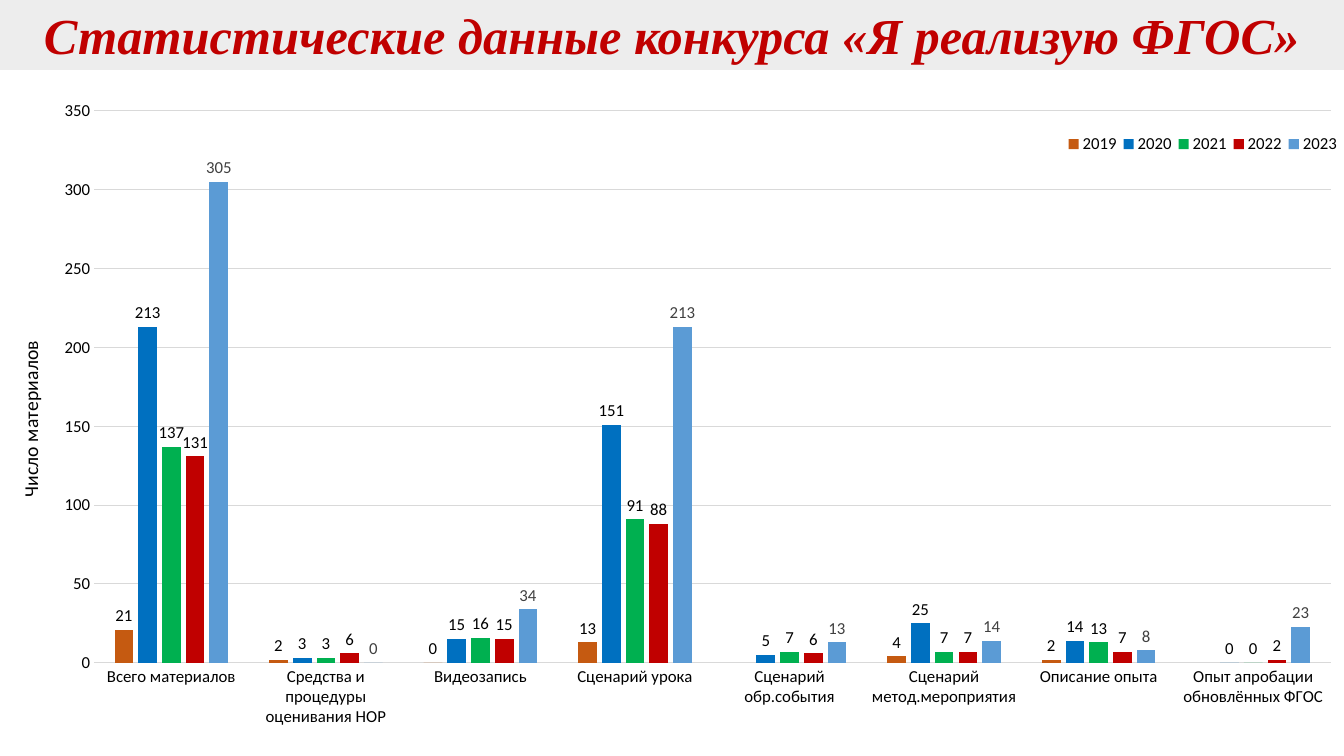
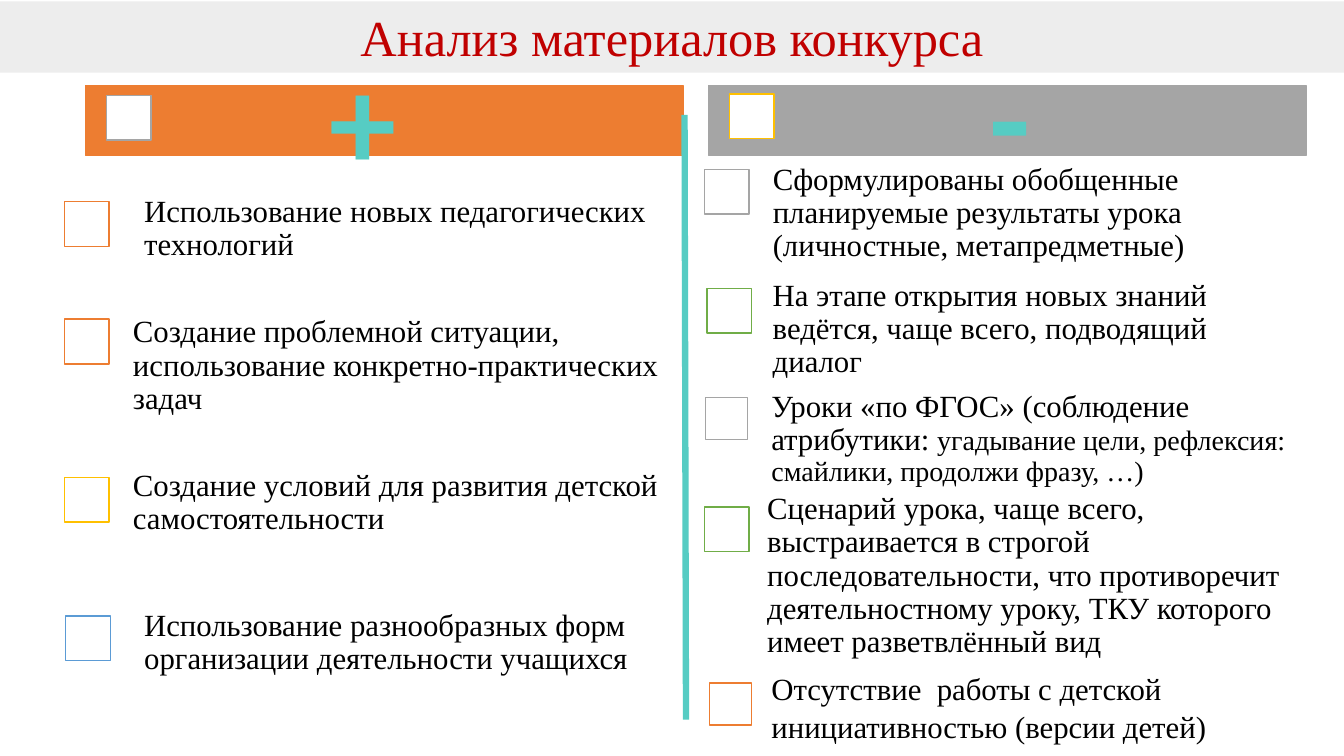
from dataclasses import dataclass

from pptx import Presentation
from pptx.chart.data import CategoryChartData
from pptx.dml.color import RGBColor
from pptx.enum.chart import XL_CHART_TYPE, XL_LABEL_POSITION, XL_LEGEND_POSITION, XL_TICK_MARK
from pptx.enum.shapes import MSO_CONNECTOR, MSO_SHAPE
from pptx.enum.text import MSO_ANCHOR as ANCHOR, PP_ALIGN as ALIGN
from pptx.oxml.ns import qn
from pptx.util import Pt


@dataclass(frozen=True)
class Theme:
    serif: str = "Times New Roman"
    sans: str = "Calibri"
    black: str = "000000"
    white: str = "FFFFFF"
    band: str = "EDEDED"
    red: str = "C00000"
    orange: str = "ED7D31"
    gray: str = "A5A5A5"
    yellow: str = "FFC000"
    green: str = "70AD47"
    blue: str = "5B9BD5"
    teal: str = "56CCC3"
    grid: str = "D9D9D9"
    dark_gray: str = "404040"
    title_size: int = 36
    sign_size: int = 96
    body_size: int = 22
    detail_size: int = 20
    chart_size: int = 12
    axis_title_size: int = 14


THEME = Theme()
SLIDE_WIDTH, SLIDE_HEIGHT = 960, 540
CHECKBOX_SIZE = 32
COLUMN_TOP, COLUMN_WIDTH, COLUMN_HEIGHT = 61, 427, 50

CATEGORIES = [
    "Всего материалов",
    "Средства и процедуры оценивания НОР",
    "Видеозапись",
    "Сценарий урока",
    "Сценарий обр.события",
    "Сценарий метод.мероприятия",
    "Описание опыта",
    "Опыт апробации обновлённых ФГОС",
]
YEARS = [
    ("2019", [21, 2, 0, 13, None, 4, 2, None], "C55A11", THEME.black),
    ("2020", [213, 3, 15, 151, 5, 25, 14, 0], "0070C0", THEME.black),
    ("2021", [137, 3, 16, 91, 7, 7, 13, 0], "00B050", THEME.black),
    ("2022", [131, 6, 15, 88, 6, 7, 7, 2], THEME.red, THEME.black),
    ("2023", [305, 0, 34, 213, 13, 14, 8, 23], THEME.blue, THEME.dark_gray),
]


@dataclass(frozen=True)
class Point:
    text: str
    text_box: tuple
    checkbox: tuple
    color: str
    detail: str = ""
    spacing: float = 0.9
    checkbox_size: int = CHECKBOX_SIZE


STRENGTHS = [
    Point("Использование новых педагогических технологий",
          (91, 127, 422, 73), (46, 144), THEME.orange),
    Point("Создание проблемной ситуации, использование конкретно-практических задач",
          (83, 225, 422, 73), (46, 228), THEME.orange),
    Point("Создание условий для развития детской самостоятельности",
          (83, 323, 422, 73), (46, 341), THEME.yellow),
    Point("Использование разнообразных форм организации деятельности учащихся",
          (91, 423, 422, 73), (47, 440), THEME.blue),
]
WEAKNESSES = [
    Point("Сформулированы обобщенные планируемые результаты урока "
          "(личностные, метапредметные)",
          (540, 116, 397, 73), (503, 121), THEME.gray),
    Point("На этапе открытия новых знаний ведётся, чаще всего, подводящий диалог",
          (540, 199, 380, 73), (505, 206), THEME.green),
    Point("Уроки «по ФГОС» (соблюдение атрибутики: ",
          (539, 277, 397, 73), (504, 284), THEME.gray,
          detail="угадывание цели, рефлексия: смайлики, продолжи фразу, …)",
          checkbox_size=30),
    Point("Сценарий урока, чаще всего, выстраивается в строгой последовательности, "
          "что противоречит деятельностному уроку, ТКУ которого имеет разветвлённый вид",
          (536, 341, 400, 141), (503, 362), THEME.green),
    Point("Отсутствие  работы с детской инициативностью (версии детей)",
          (539, 474, 397, 61), (507, 488), THEME.orange,
          spacing=1.05, checkbox_size=30),
]


def rgb(color):
    return RGBColor.from_string(color)


def style_font(font, size, color=THEME.black, family=THEME.sans, bold=False, italic=False):
    font.size, font.name = Pt(size), family
    font.color.rgb = rgb(color)
    font.bold, font.italic = bold, italic


def add_rectangle(slide, left, top, width, height, fill, outline=None):
    rectangle = slide.shapes.add_shape(
        MSO_SHAPE.RECTANGLE, Pt(left), Pt(top), Pt(width), Pt(height))
    rectangle.shadow.inherit = False
    rectangle.fill.solid()
    rectangle.fill.fore_color.rgb = rgb(fill)
    if outline:
        rectangle.line.color.rgb = rgb(outline)
        rectangle.line.width = Pt(1)
    else:
        rectangle.line.fill.background()
    return rectangle


def add_title(slide, text, top=0, height=50, anchor=ANCHOR.TOP, spacing=1.0, emphasis=False):
    band = add_rectangle(slide, 0, top, SLIDE_WIDTH, height, THEME.band)
    band.text_frame.word_wrap = True
    band.text_frame.vertical_anchor = anchor
    title = band.text_frame.paragraphs[0]
    title.text = text
    title.alignment = ALIGN.CENTER
    title.line_spacing = spacing
    style_font(title.font, THEME.title_size, THEME.red, THEME.serif, emphasis, emphasis)


def add_paragraph_box(slide, bounds, inset, alignment, spacing):
    box = slide.shapes.add_textbox(*map(Pt, bounds))
    frame = box.text_frame
    frame.word_wrap = True
    frame.vertical_anchor = ANCHOR.MIDDLE
    frame.margin_left = frame.margin_right = Pt(inset)
    frame.margin_top = frame.margin_bottom = Pt(0)
    paragraph = frame.paragraphs[0]
    paragraph.alignment = alignment
    paragraph.line_spacing = spacing
    return paragraph


def add_checkbox(slide, position, color, size=CHECKBOX_SIZE):
    add_rectangle(slide, *position, size, size, THEME.white, color)


def add_column_heading(slide, left, color, sign, sign_box, checkbox, checkbox_color):
    add_rectangle(slide, left, COLUMN_TOP, COLUMN_WIDTH, COLUMN_HEIGHT, color, color)
    sign_left, sign_height = sign_box
    bounds = (sign_left, COLUMN_TOP, COLUMN_WIDTH, sign_height)
    heading = add_paragraph_box(slide, bounds, 14, ALIGN.CENTER, 0.9)
    heading.text = sign
    style_font(heading.font, THEME.sign_size, THEME.teal, bold=True)
    add_checkbox(slide, checkbox, checkbox_color)


def add_point(slide, point):
    add_checkbox(slide, point.checkbox, point.color, point.checkbox_size)
    paragraph = add_paragraph_box(slide, point.text_box, 12, ALIGN.LEFT, point.spacing)
    paragraph.text = point.text
    if point.detail:
        style_font(paragraph.runs[0].font, THEME.body_size, family=THEME.serif)
        detail = paragraph.add_run()
        detail.text = point.detail
        style_font(detail.font, THEME.detail_size, family=THEME.serif)
    else:
        style_font(paragraph.font, THEME.body_size, family=THEME.serif)


def add_divider(slide, start, end):
    divider = slide.shapes.add_connector(MSO_CONNECTOR.STRAIGHT, *map(Pt, start + end))
    divider.line.color.rgb = rgb(THEME.teal)
    divider.line.width = Pt(4.5)
    properties = divider._element.spPr
    properties.append(properties.makeelement(qn("a:effectLst"), {}))


def set_layout(element, index, **settings):
    for previous in element.findall(qn("c:layout")):
        element.remove(previous)
    layout = element.makeelement(qn("c:layout"), {})
    manual = layout.makeelement(qn("c:manualLayout"), {})
    layout.append(manual)
    for tag, value in settings.items():
        manual.append(manual.makeelement(qn(f"c:{tag}"), {"val": str(value)}))
    element.insert(index, layout)


def style_axes(chart):
    for axis in (chart.category_axis, chart.value_axis):
        axis.major_tick_mark = axis.minor_tick_mark = XL_TICK_MARK.NONE
        style_font(axis.tick_labels.font, THEME.chart_size)
    values = chart.value_axis
    values.minimum_scale, values.maximum_scale, values.major_unit = 0, 350, 50
    values.format.line.fill.background()
    for line in (chart.category_axis.format.line, values.major_gridlines.format.line):
        line.color.rgb = rgb(THEME.grid)
        line.width = Pt(0.75)
    caption = values.axis_title.text_frame.paragraphs[0]
    caption.text = "Число материалов"
    style_font(caption.font, THEME.axis_title_size)
    set_layout(values.axis_title._element, 1, xMode="edge", yMode="edge", x=0.01, y=0.37)


def style_years(plot):
    plot.gap_width, plot.overlap = 219, -27
    plot.vary_by_categories = False
    for series, (_, _, color, label_color) in zip(plot.series, YEARS):
        series.format.fill.solid()
        series.format.fill.fore_color.rgb = rgb(color)
        series.invert_if_negative = False
        labels = series.data_labels
        labels.show_value = True
        labels.position = XL_LABEL_POSITION.OUTSIDE_END
        style_font(labels.font, THEME.chart_size, label_color)


def add_statistics_chart(slide):
    statistics = CategoryChartData()
    statistics.categories = CATEGORIES
    for year, counts, _, _ in YEARS:
        statistics.add_series(year, counts)
    top = 65
    chart = slide.shapes.add_chart(
        XL_CHART_TYPE.COLUMN_CLUSTERED, Pt(0), Pt(top),
        Pt(SLIDE_WIDTH), Pt(SLIDE_HEIGHT - top), statistics).chart
    chart.has_title = False
    style_font(chart.font, THEME.chart_size)
    style_axes(chart)
    style_years(chart.plots[0])
    chart.has_legend = True
    chart.legend.position = XL_LEGEND_POSITION.BOTTOM
    chart.legend.include_in_layout = False
    style_font(chart.legend.font, THEME.chart_size)
    set_layout(chart.legend._element, 1, xMode="edge", yMode="edge",
               x=0.79, y=0.05, w=0.21, h=0.06)
    plot_area = chart._chartSpace.find(f".//{qn('c:plotArea')}")
    set_layout(plot_area, 0, layoutTarget="inner", xMode="edge", yMode="edge",
               x=0.07, y=0.03, w=0.92, h=0.83)


def build_statistics(slide):
    add_statistics_chart(slide)
    add_title(slide, "Статистические данные конкурса «Я реализую ФГОС»",
              anchor=ANCHOR.BOTTOM, spacing=0.9, emphasis=True)


def build_analysis(slide):
    add_title(slide, "Анализ материалов конкурса", top=1, height=51)
    add_column_heading(slide, 61, THEME.orange, "+", (46, 59), (76, 68), THEME.gray)
    add_column_heading(slide, 506, THEME.gray, "-", (508, 55), (521, 67), THEME.yellow)
    for point in STRENGTHS + WEAKNESSES:
        add_point(slide, point)
    add_divider(slide, (489, 82), (490, 514))


def main():
    deck = Presentation()
    deck.slide_width, deck.slide_height = Pt(SLIDE_WIDTH), Pt(SLIDE_HEIGHT)
    for build in (build_statistics, build_analysis):
        build(deck.slides.add_slide(deck.slide_layouts[6]))
    deck.save("out.pptx")


if __name__ == "__main__":
    main()
